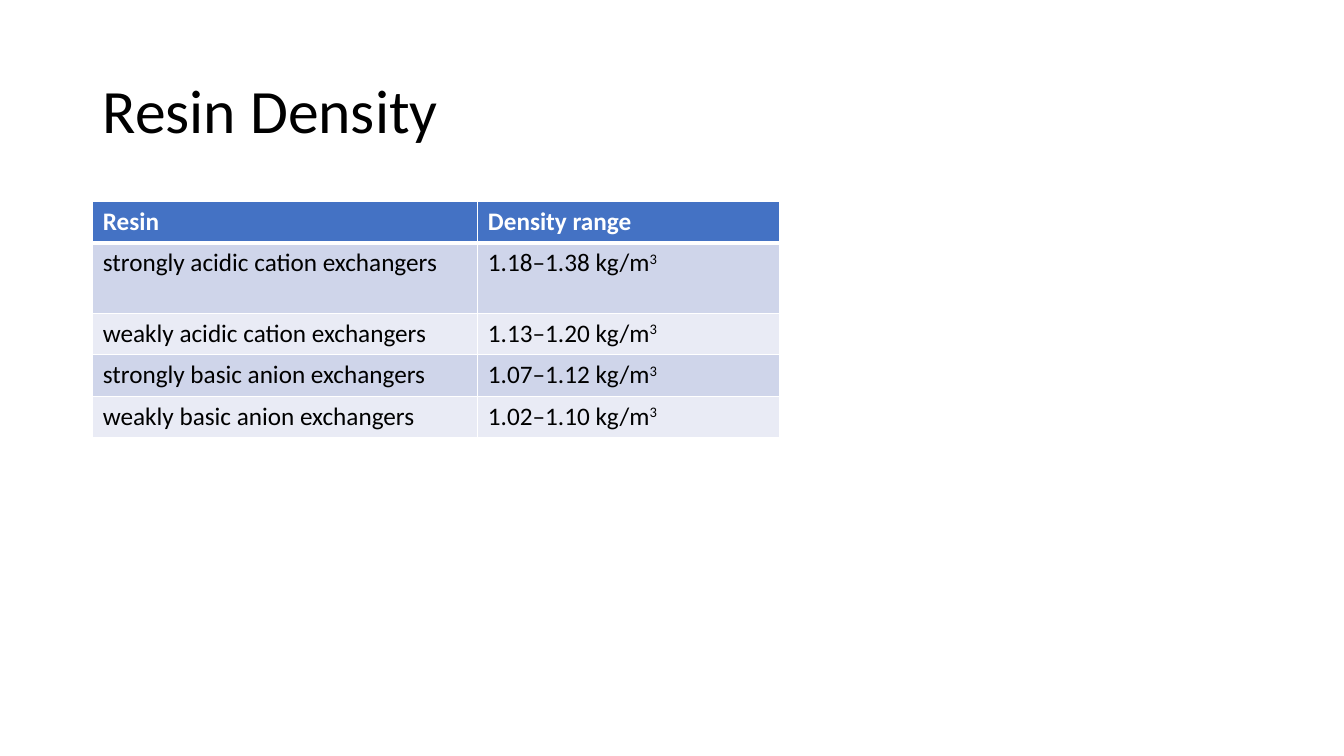
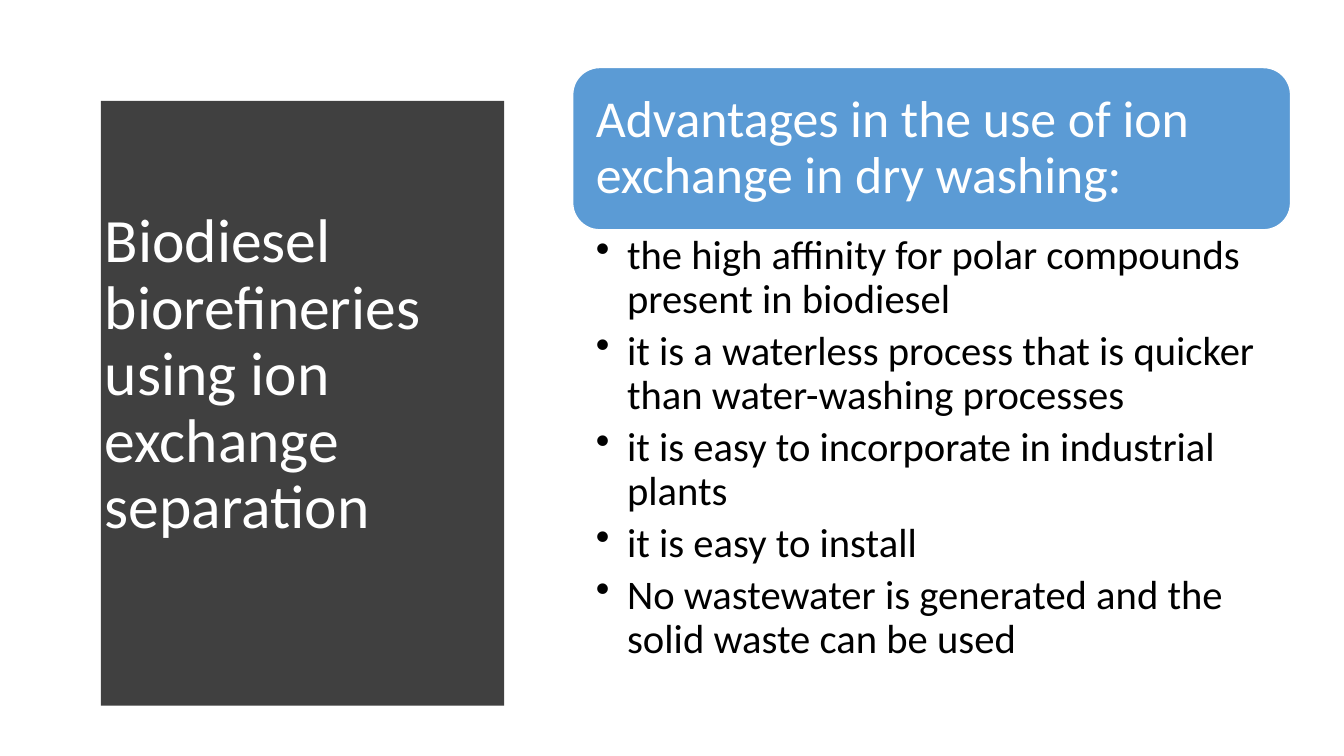
import pptx
import pptx.util
import pptx.dml.color
import pptx.enum.shapes
import pptx.enum.text
from lxml import etree

Inches, Pt = pptx.util.Inches, pptx.util.Pt
Shape = pptx.enum.shapes.MSO_SHAPE
Anchor = pptx.enum.text.MSO_ANCHOR
NS = "http://schemas.openxmlformats.org/drawingml/2006/main"
FONT = "Calibri"
WHITE, BLACK, DARK = "FFFFFF", "000000", "404040"
BLUE, SKY, BANDS = "4472C4", "5B9BD5", ["CFD5EA", "E9EBF5"]


def rgb(code):
    return pptx.dml.color.RGBColor.from_string(code)


def write(para, text, size, color, bold=False, base=0):
    run = para.add_run()
    run.text = text
    font = run.font
    font.name, font.size, font.bold = FONT, Pt(size), bold
    font.color.rgb = rgb(color)
    if base:
        run._r.get_or_add_rPr().set("baseline", str(base * 1000))


prs = pptx.Presentation()
prs.slide_width, prs.slide_height = Inches(13.33), Inches(7.5)
blank = prs.slide_layouts[6]
first, second = [prs.slides.add_slide(blank) for _ in range(2)]

# Slide 1: density table
rows = [
    ("Resin", "Density range"),
    ("strongly acidic cation exchangers", "1.18–1.38 kg/m"),
    ("weakly acidic cation exchangers", "1.13–1.20 kg/m"),
    ("strongly basic anion exchangers", "1.07–1.12 kg/m"),
    ("weakly basic anion exchangers", "1.02–1.10 kg/m"),
]
table = first.shapes.add_table(
    len(rows), 2, Inches(0.92), Inches(2), Inches(6.81), Inches(2.32)).table
for col, width in zip(table.columns, (3.82, 2.99)):
    col.width = Inches(width)
for i, texts in enumerate(rows):
    table.rows[i].height = Inches(0.7 if i == 1 else 0.41)
    for j, text in enumerate(texts):
        cell = table.cell(i, j)
        props = cell._tc.get_or_add_tcPr()
        for side in "LRTB":
            thick = (i, side) in [(0, "B"), (1, "T")]
            edge = etree.SubElement(
                props, f"{{{NS}}}ln{side}", w=str(Pt(3 if thick else 1)))
            fill = etree.SubElement(edge, f"{{{NS}}}solidFill")
            etree.SubElement(fill, f"{{{NS}}}srgbClr", val=WHITE)
        cell.fill.solid()
        cell.fill.fore_color.rgb = rgb(BANDS[(i - 1) % 2] if i else BLUE)
        para = cell.text_frame.paragraphs[0]
        write(para, text, 18, BLACK if i else WHITE, bold=i == 0)
        if i and j:
            write(para, "3", 18, BLACK, base=30)

# Slide 2: dark panel with a bowed right side
left, top, foot = 0.53, 0.52, 6.96
mid, right, bend, steps = 3.68, 5.32, 0.023, 40
curve = []
for n in range(steps + 1):
    y = top + (foot - top) * n / steps
    curve.append((right - bend * (y - mid) ** 2, y))
path = second.shapes.build_freeform(left, top, scale=Inches(1))
path.add_line_segments(curve + [(left, foot)], close=True)
panel = path.convert_to_shape()

# Slide 2: heading card
card = second.shapes.add_shape(
    Shape.ROUNDED_RECTANGLE, Inches(5.68), Inches(0.67), Inches(7.12), Inches(1.61))
for shape, color in ((panel, DARK), (card, SKY)):
    shape.shadow.inherit = False
    shape.fill.solid()
    shape.fill.fore_color.rgb = rgb(color)
panel.line.fill.background()
card.line.color.rgb = rgb(WHITE)
card.line.width = Pt(1)

# Text of both slides: slide, place, insets, anchor, size, colour, lines
points = [
    "the high affinity for polar compounds present in biodiesel",
    "it is a waterless process that is quicker than water-washing processes",
    "it is easy to incorporate in industrial plants",
    "it is easy to install",
    "No wastewater is generated and the solid waste can be used",
]
plain = (0.1, 0.05, 0.1, 0.05)
blocks = [
    (first, (0.92, 0.4, 11.5, 1.45), plain, Anchor.MIDDLE, 44, BLACK,
     ["Resin Density"]),
    (second, (0.94, 1.11, 3.74, 5.24), plain, Anchor.MIDDLE, 44, WHITE,
     ["Biodiesel biorefineries using ion exchange separation"]),
    (second, (5.76, 0.75, 6.97, 1.45), (0.15,) * 4, Anchor.MIDDLE, 37, WHITE,
     ["Advantages in the use of ion exchange in dry washing:"]),
    (second, (5.68, 2.28, 7.12, 4.52), (0.23, 0.05, 0.29, 0.05), Anchor.TOP, 29, BLACK,
     points),
]
for slide, place, pads, anchor, size, color, lines in blocks:
    frame = slide.shapes.add_textbox(*map(Inches, place)).text_frame
    frame.word_wrap = True
    frame.vertical_anchor = anchor
    (frame.margin_left, frame.margin_top,
     frame.margin_right, frame.margin_bottom) = map(Inches, pads)
    for n, text in enumerate(lines):
        para = frame.add_paragraph() if n else frame.paragraphs[0]
        para.line_spacing = 0.9
        if lines is points:
            para.space_after = Pt(size * 0.2)
            props = para._p.get_or_add_pPr()
            props.set("marL", str(Inches(0.31)))
            props.set("indent", str(-Inches(0.31)))
            etree.SubElement(props, f"{{{NS}}}buChar", char="•")
        write(para, text, size, color)

prs.save("out.pptx")
